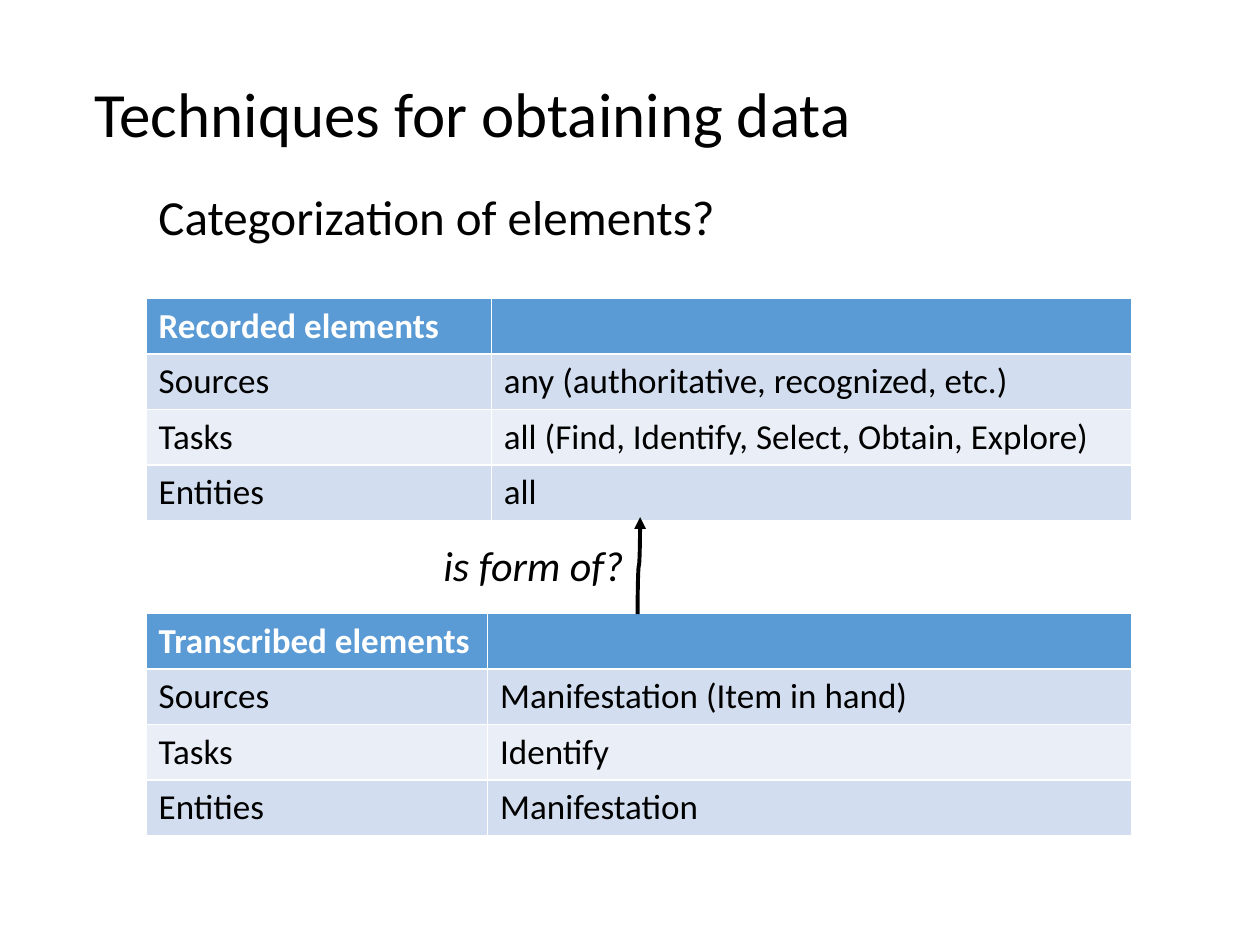
from lxml import etree
from pptx import Presentation
from pptx.dml.color import RGBColor
from pptx.enum import shapes, text
from pptx.oxml.ns import qn
from pptx.util import Inches, Pt

# Content
TITLE = "Techniques for obtaining data"
QUESTION = "Categorization of elements?"
RELATION = "is form of?"
TABLES = [  # top, first column width, rows
    (2.37, 2.74, [
        ("Recorded elements", ""),
        ("Sources", "any (authoritative, recognized, etc.)"),
        ("Tasks", "all (Find, Identify, Select, Obtain, Explore)"),
        ("Entities", "all"),
    ]),
    (4.87, 2.71, [
        ("Transcribed elements", ""),
        ("Sources", "Manifestation (Item in hand)"),
        ("Tasks", "Identify"),
        ("Entities", "Manifestation"),
    ]),
]

# Look
BLACK = RGBColor(0x00, 0x00, 0x00)
WHITE = RGBColor(0xFF, 0xFF, 0xFF)
HEADER = RGBColor(0x5B, 0x9B, 0xD5)
BANDS = [RGBColor(0xEA, 0xEF, 0xF7), RGBColor(0xD2, 0xDE, 0xEF)]
LEFT, TABLE_W, TABLE_H = 1.16, 7.82, 1.73


def write(frame, words, size, color=BLACK, **extra):
    paragraph = frame.paragraphs[0]
    paragraph.text = words
    paragraph.alignment = text.PP_ALIGN.LEFT
    style = {"name": "Calibri", "size": Pt(size), **extra}
    for key, value in style.items():
        setattr(paragraph.font, key, value)
    paragraph.font.color.rgb = color


def add_label(slide, words, size, box, **extra):
    label = slide.shapes.add_textbox(*map(Inches, box))
    label.text_frame.word_wrap = False
    write(label.text_frame, words, size, **extra)


def add_elements_table(slide, top, first_width, rows):
    frame = slide.shapes.add_table(
        len(rows), 2, *map(Inches, (LEFT, top, TABLE_W, TABLE_H)))
    table = frame.table
    for column, width in zip(table.columns, (first_width, TABLE_W - first_width)):
        column.width = Inches(width)
    for r, row in enumerate(rows):
        for c, words in enumerate(row):
            cell = table.cell(r, c)
            cell.fill.solid()
            cell.fill.fore_color.rgb = BANDS[r % 2] if r else HEADER
            write(cell.text_frame, words, 20, BLACK if r else WHITE, bold=r == 0)


def add_relation_arrow(slide, center_x, center_y, rise, shift):
    # Drawn lying down, then turned a quarter so that it leaves and arrives upright
    arrow = slide.shapes.add_connector(
        shapes.MSO_CONNECTOR.CURVE,
        Inches(center_x + rise / 2), Inches(center_y + shift / 2),
        Inches(center_x - rise / 2), Inches(center_y - shift / 2))
    arrow.line.color.rgb = BLACK
    arrow.line.width = Pt(2.25)
    properties = arrow._element.spPr
    properties.find(qn("a:xfrm")).set("rot", str(90 * 60000))
    etree.SubElement(properties.find(qn("a:ln")), qn("a:tailEnd"), type="triangle")
    etree.SubElement(properties, qn("a:effectLst"))


def main():
    deck = Presentation()
    deck.slide_width, deck.slide_height = Inches(10), Inches(7.5)
    slide = deck.slides.add_slide(deck.slide_layouts[5])

    # Title
    title = slide.shapes.title
    place = {"left": 0.65, "top": 0.54, "width": 6.26, "height": 0.71}
    for side, length in place.items():
        setattr(title, side, Inches(length))
    title.text_frame.word_wrap = False
    write(title.text_frame, TITLE, 36)

    # Tables and the relation between them
    for top, first_width, rows in TABLES:
        add_elements_table(slide, top, first_width, rows)
    add_relation_arrow(slide, 5.07, 4.49, 0.77, 0.02)
    add_label(slide, RELATION, 24, (3.42, 4.23, 1.65, 0.5), italic=True)
    add_label(slide, QUESTION, 28, (LEFT, 1.43, 4.66, 0.57))

    deck.save("out.pptx")


if __name__ == "__main__":
    main()
